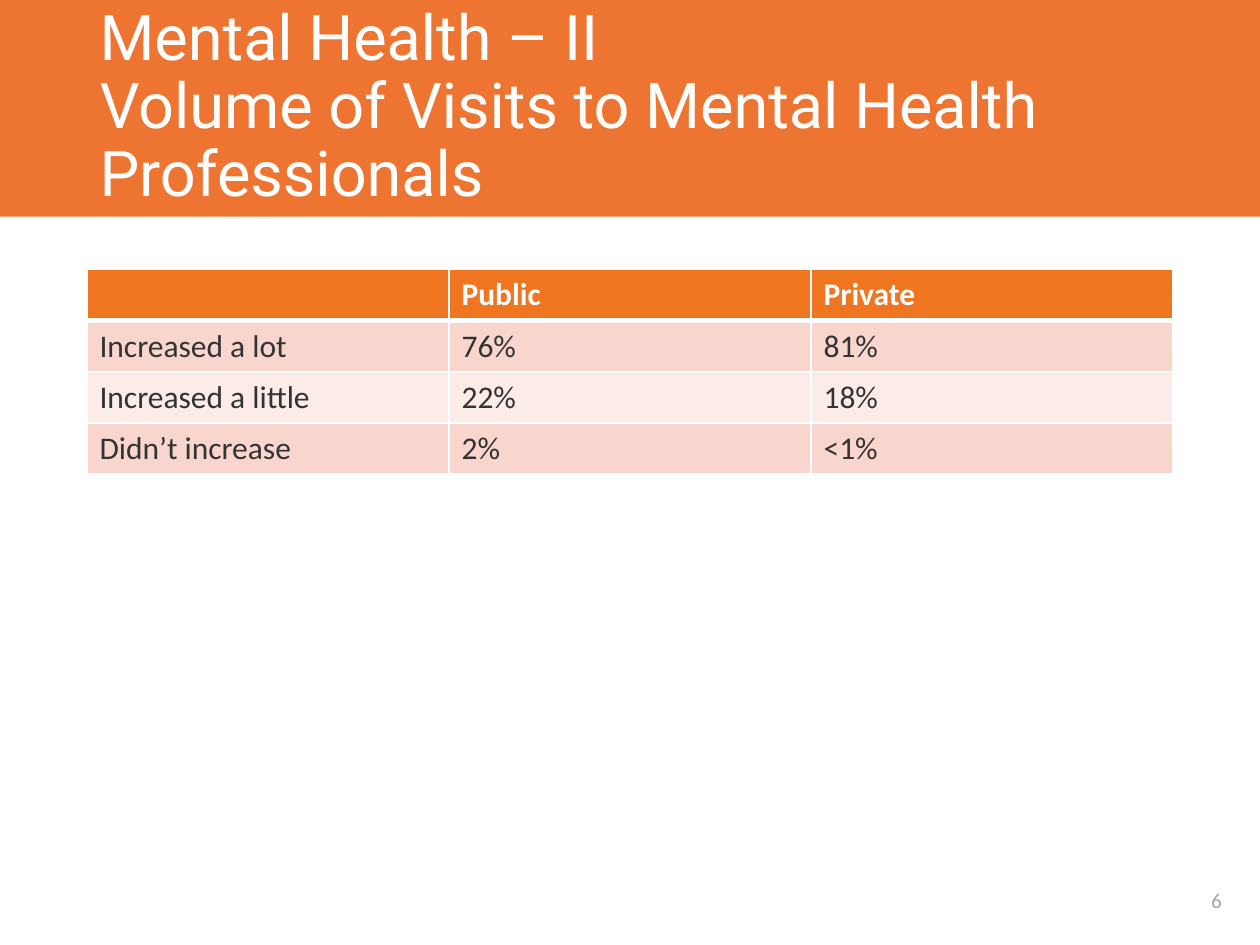
from dataclasses import dataclass

from lxml.etree import SubElement as Sub
from pptx import Presentation
from pptx.dml.color import RGBColor as RGB
from pptx.enum.shapes import MSO_SHAPE as Shape
from pptx.enum.text import MSO_ANCHOR as Anchor, MSO_AUTO_SIZE as Auto, PP_ALIGN as Align
from pptx.oxml.ns import qn
from pptx.util import Inches, Pt


@dataclass(frozen=True)
class Theme:
    band: str = "EE7531"
    head: str = "EF7521"
    odd: str = "F9D6CD"
    even: str = "FCECE8"
    ink: str = "333333"
    white: str = "FFFFFF"
    gray: str = "A6A6A6"
    title: int = 36
    body: int = 18
    small: int = 12
    sans: str = "Calibri"
    display: str = "Roboto"


THEME = Theme()
ROWS = [
    ("", "Public", "Private"),
    ("Increased a lot", "76%", "81%"),
    ("Increased a little", "22%", "18%"),
    ("Didn’t increase", "2%", "<1%"),
]


def style(para, name, size, color, bold=False):
    font = para.font
    font.name, font.size, font.bold = name, Pt(size), bold
    font.color.rgb = RGB.from_string(color)


def add_band(slide, box):
    """Orange band, sent behind the title."""
    band = slide.shapes.add_shape(Shape.RECTANGLE, *map(Inches, box))
    band.shadow.inherit = False
    band.fill.solid()
    band.fill.fore_color.rgb = RGB.from_string(THEME.band)
    band.line.fill.background()
    title = slide.shapes.title
    title.element.addprevious(band.element)


def add_title(slide, box, text):
    title = slide.shapes.title
    title.left, title.top, title.width, title.height = map(Inches, box)
    frame = title.text_frame
    frame.word_wrap = True
    frame.auto_size = Auto.NONE
    frame.vertical_anchor = Anchor.MIDDLE
    para = frame.paragraphs[0]
    para.text = text
    para.alignment = Align.LEFT
    para.line_spacing = 0.9
    style(para, THEME.display, THEME.title, THEME.white)


def add_edges(cell, base):
    """White cell borders; base is the width of the lower one."""
    props = cell._tc.get_or_add_tcPr()
    for side, width in (("L", 1), ("R", 1), ("T", 1), ("B", base)):
        line = Sub(props, qn(f"a:ln{side}"), w=str(Pt(width)))
        fill = Sub(line, qn("a:solidFill"))
        Sub(fill, qn("a:srgbClr"), val=THEME.white)


def add_grid(slide, box, rows):
    shape = slide.shapes.add_table(len(rows), len(rows[0]), *map(Inches, box))
    for r, row in enumerate(rows):
        top = r == 0
        shade = THEME.head if top else THEME.odd if r % 2 else THEME.even
        for c, text in enumerate(row):
            cell = shape.table.cell(r, c)
            # The header's thick rule is shared with the row below
            add_edges(cell, 3 if top else 1)
            if r == 1:
                cell._tc.tcPr.find(qn("a:lnT")).set("w", str(Pt(3)))
            cell.fill.solid()
            cell.fill.fore_color.rgb = RGB.from_string(shade)
            cell.text = text
            style(cell.text_frame.paragraphs[0], THEME.sans, THEME.body,
                  THEME.white if top else THEME.ink, top)


def add_number(slide, box, text):
    frame = slide.shapes.add_textbox(*map(Inches, box)).text_frame
    frame.word_wrap = True
    frame.vertical_anchor = Anchor.MIDDLE
    para = frame.paragraphs[0]
    para.text = text
    para.alignment = Align.CENTER
    style(para, THEME.sans, THEME.small, THEME.gray)


def main():
    deck = Presentation()
    deck.slide_width, deck.slide_height = Inches(10), Inches(7.5)
    slide = deck.slides.add_slide(deck.slide_layouts[5])
    add_band(slide, (-0.01, 0, 10.02, 1.72))
    add_title(slide, (0.69, 0, 8.62, 1.71),
              "Mental Health – II\vVolume of Visits to Mental Health Professionals")
    add_grid(slide, (0.69, 2.14, 8.62, 1.62), ROWS)
    add_number(slide, (9.31, 6.95, 0.69, 0.39), "6")
    deck.save("out.pptx")


if __name__ == "__main__":
    main()
